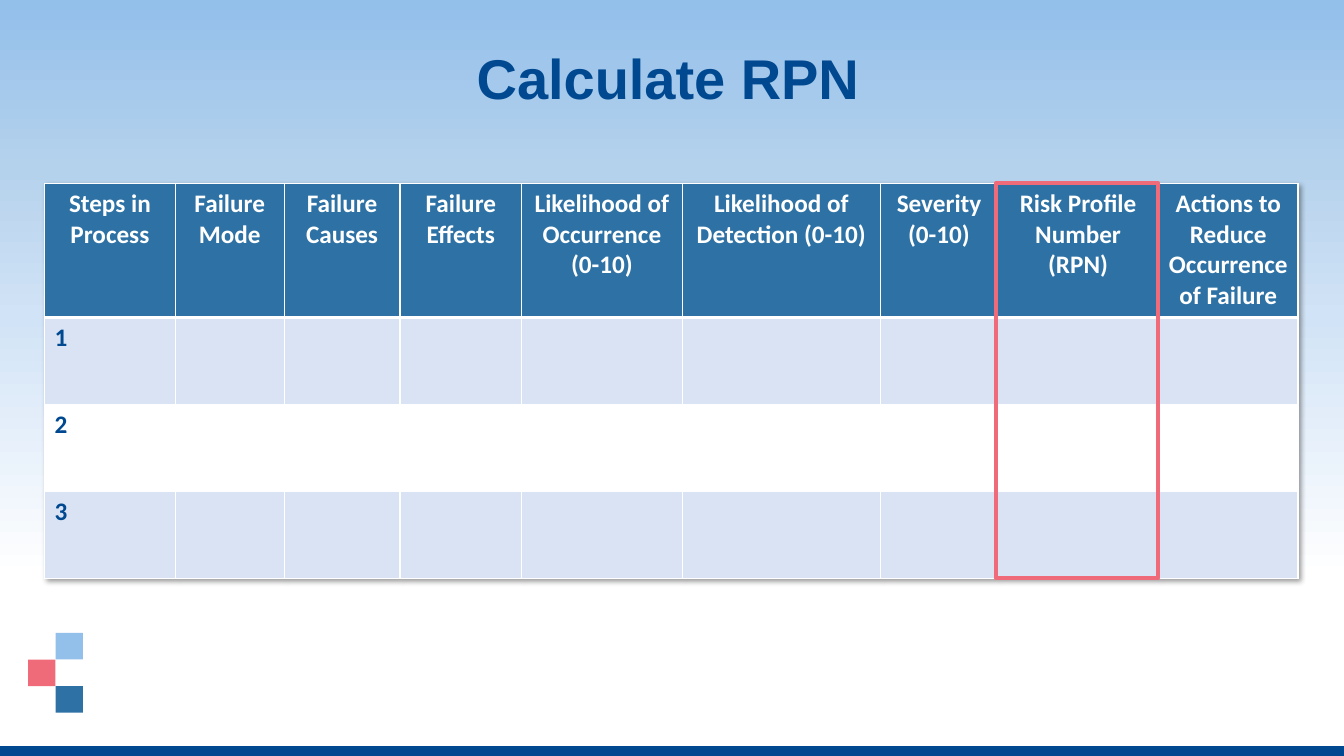
from typing import NamedTuple

from lxml.etree import SubElement
from pptx import Presentation
from pptx.dml.color import RGBColor
from pptx.enum.shapes import MSO_SHAPE
from pptx.enum.text import MSO_ANCHOR, PP_ALIGN
from pptx.oxml import parse_xml
from pptx.oxml.ns import nsdecls, qn
from pptx.util import Cm, Pt

COLORS = {
    "navy": "004991",
    "blue": "2E72A5",
    "sky": "93BFEB",
    "coral": "EF6B7A",
    "band": "DAE3F3",
    "white": "FFFFFF",
}
GRADIENT = [(0, COLORS["sky"]), (29, "B5D2EC"), (54, "D1E3F6"), (99, COLORS["white"])]
SLIDE_W, SLIDE_H = 33.87, 19.05


class Block(NamedTuple):
    left: float
    top: float
    width: float
    height: float
    color: str


class Column(NamedTuple):
    heading: str
    width: float


COLUMNS = [
    Column("Steps in Process", 3.3),
    Column("Failure Mode", 2.74),
    Column("Failure Causes", 2.92),
    Column("Failure Effects", 3.07),
    Column("Likelihood of Occurrence (0-10)", 4.04),
    Column("Likelihood of Detection (0-10)", 5.0),
    Column("Severity (0-10)", 2.95),
    Column("Risk Profile Number (RPN)", 4.06),
    Column("Actions to Reduce Occurrence of Failure", 3.51),
]
STEPS = ["1", "2", "3"]
TABLE_LEFT, TABLE_TOP = 1.12, 4.62
HEADER_H, ROW_H = 3.38, 2.19
TABLE_H = HEADER_H + ROW_H * len(STEPS)

TILE_W, TILE_H = 0.69, 0.67
TILE_LEFT, TILE_TOP = 0.71, 15.95
BLOCKS = [Block(0, 18.8, SLIDE_W, 0.25, "navy")] + [
    Block(TILE_LEFT + col * TILE_W, TILE_TOP + row * TILE_H, TILE_W, TILE_H, color)
    for col, row, color in [(1, 0, "sky"), (1, 2, "blue"), (0, 1, "coral")]
]


def rgb(name: str) -> RGBColor:
    return RGBColor.from_string(COLORS[name])


def add_rect(slide, left: float, top: float, width: float, height: float):
    sp = slide.shapes.add_shape(
        MSO_SHAPE.RECTANGLE, Cm(left), Cm(top), Cm(width), Cm(height))
    sp.shadow.inherit = False
    sp.line.fill.background()
    return sp


def add_block(slide, block: Block) -> None:
    sp = add_rect(slide, block.left, block.top, block.width, block.height)
    sp.fill.solid()
    sp.fill.fore_color.rgb = rgb(block.color)


def add_backdrop(slide) -> None:
    sp = add_rect(slide, 0, 0, SLIDE_W, 14.71)
    sp.fill.gradient()
    sp.fill.gradient_angle = 270
    stops = sp._element.spPr.find(qn("a:gradFill")).find(qn("a:gsLst"))
    for stop in list(stops):
        stops.remove(stop)
    for position, color in GRADIENT:
        stop = SubElement(stops, qn("a:gs"), pos=str(position * 1000))
        SubElement(stop, qn("a:srgbClr"), val=color)


def format_text(tf, size: int, font: str, color: str, align: PP_ALIGN) -> None:
    for p in tf.paragraphs:
        p.alignment = align
        for r in p.runs:
            r.font.size = Pt(size)
            r.font.name = font
            r.font.bold = True
            r.font.color.rgb = rgb(color)


def set_borders(cell, top: float, bottom: float) -> None:
    tc_pr = cell._tc.get_or_add_tcPr()
    widths = {"lnL": 1, "lnR": 1, "lnT": top, "lnB": bottom}
    for index, (side, width) in enumerate(widths.items()):
        tc_pr.insert(index, parse_xml(
            f'<a:{side} {nsdecls("a")} w="{Pt(width)}"><a:solidFill>'
            f'<a:srgbClr val="{COLORS["white"]}"/></a:solidFill></a:{side}>'))


def add_rpn_table(slide) -> None:
    frame = slide.shapes.add_table(
        len(STEPS) + 1, len(COLUMNS), Cm(TABLE_LEFT), Cm(TABLE_TOP),
        Cm(sum(c.width for c in COLUMNS)), Cm(TABLE_H))
    table = frame.table
    for index, column in enumerate(COLUMNS):
        table.columns[index].width = Cm(column.width)
        table.cell(0, index).text_frame.text = column.heading
    for index, step in enumerate(STEPS, start=1):
        table.cell(index, 0).text_frame.text = step

    for index, row in enumerate(table.rows):
        header = index == 0
        row.height = Cm(HEADER_H if header else ROW_H)
        fill = "blue" if header else "band" if index % 2 else "white"
        for cell in row.cells:
            cell.fill.solid()
            cell.fill.fore_color.rgb = rgb(fill)
            set_borders(cell, top=3 if index == 1 else 1, bottom=3 if header else 1)
            format_text(cell.text_frame, 18, "Calibri",
                        "white" if header else "navy",
                        PP_ALIGN.CENTER if header else PP_ALIGN.LEFT)

    # Soft shadow behind the whole table
    table._tbl.tblPr.insert(0, parse_xml(
        f'<a:effectLst {nsdecls("a")}><a:outerShdw blurRad="50800" dist="38100" '
        'dir="2700000" algn="tl" rotWithShape="0"><a:srgbClr val="000000">'
        '<a:alpha val="40000"/></a:srgbClr></a:outerShdw></a:effectLst>'))


def add_highlight(slide) -> None:
    sp = add_rect(slide, 25.1, TABLE_TOP, 4.09, TABLE_H)
    sp.fill.background()
    sp.line.color.rgb = rgb("coral")
    sp.line.width = Pt(3)


def place_title(slide) -> None:
    title = slide.shapes.title
    slide.shapes._spTree.append(title._element)  # above the backdrop
    title.left, title.top, title.width, title.height = Cm(1.4), Cm(0.99), Cm(30.86), Cm(2.11)
    tf = title.text_frame
    tf.text = "Calculate RPN"
    tf.word_wrap = True
    tf.vertical_anchor = MSO_ANCHOR.MIDDLE
    tf.paragraphs[0].line_spacing = 0.9
    tf.paragraphs[0].space_before = Pt(0)
    format_text(tf, 40, "Arial", "navy", PP_ALIGN.CENTER)


def main() -> None:
    prs = Presentation()
    prs.slide_width, prs.slide_height = Cm(SLIDE_W), Cm(SLIDE_H)
    slide = prs.slides.add_slide(prs.slide_layouts[5])

    # Background, footer bar and corner tiles
    add_backdrop(slide)
    for block in BLOCKS:
        add_block(slide, block)

    # Title, table and marked column
    place_title(slide)
    add_rpn_table(slide)
    add_highlight(slide)
    prs.save("out.pptx")


if __name__ == "__main__":
    main()
